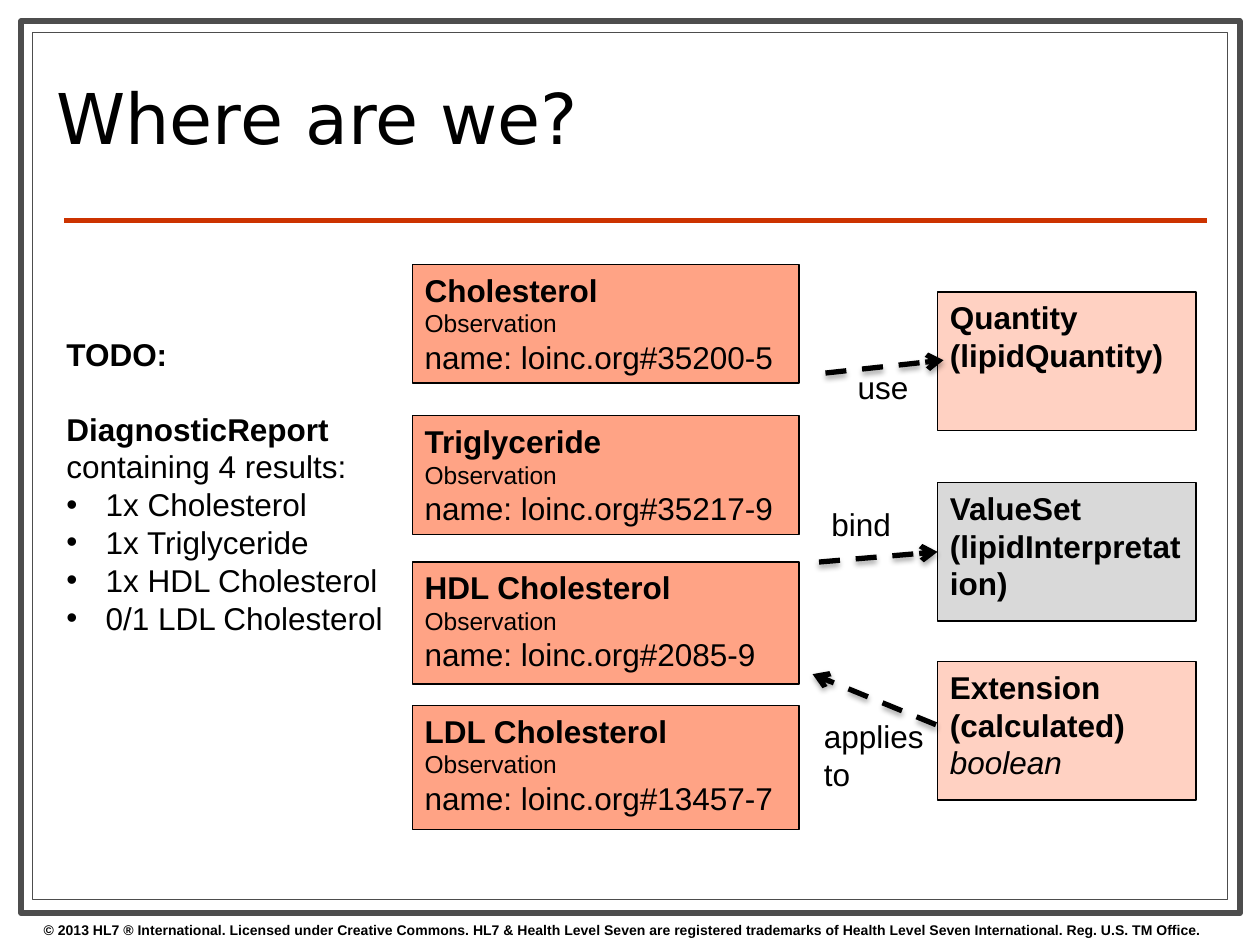
from lxml import etree
from pptx import Presentation
from pptx.dml.color import RGBColor as Rgb
from pptx.enum.dml import MSO_LINE as Dash
from pptx.enum.shapes import MSO_CONNECTOR as Conn, MSO_SHAPE as Kind
from pptx.enum.text import MSO_ANCHOR as Anchor, PP_ALIGN as Align
from pptx.oxml import parse_xml
from pptx.oxml.ns import nsdecls, qn
from pptx.util import Cm, Pt

HUE = {"ink": "000000", "paper": "FFFFFF", "frame": "4D4D4D", "rule": "CC3300",
       "salmon": "FFA385", "pink": "FFD1C2", "grey": "D9D9D9"}
SHADE = ('<a:effectLst %s><a:outerShdw blurRad="40000" dist="23000" dir="5400000" '
         'rotWithShape="0"><a:srgbClr val="000000"><a:alpha val="35000"/>'
         '</a:srgbClr></a:outerShdw></a:effectLst>' % nsdecls("a"))


def tint(name):
    """Look up a colour by name."""
    return Rgb.from_string(HUE[name])


def write(frame, paras, wrap=True, font="Arial"):
    """Fill a text frame from (text, size, style) paragraphs."""
    frame.word_wrap = wrap
    for i, (text, size, style) in enumerate(paras):
        para = frame.add_paragraph() if i else frame.paragraphs[0]
        para.alignment = Align.LEFT
        if "dot" in style:
            props = para._p.get_or_add_pPr()
            props.set("marL", str(Cm(0.79)))
            props.set("indent", str(Cm(-0.79)))
            etree.SubElement(props, qn("a:buFont")).set("typeface", "Arial")
            etree.SubElement(props, qn("a:buChar")).set("char", "•")
        if "gap" in style:
            para.space_before = Pt(21)
        run = para.add_run()
        run.text = text
        run.font.name, run.font.size = font, Pt(size)
        run.font.bold, run.font.italic = "bold" in style, "slant" in style
        run.font.color.rgb = tint("ink")


def panel(shapes, box, fill, line="ink", width=0.75, paras=()):
    """Draw a filled rectangle with text at its top left."""
    rect = shapes.add_shape(Kind.RECTANGLE, *map(Cm, box))
    rect.shadow.inherit = False
    rect.fill.solid()
    rect.fill.fore_color.rgb = tint(fill)
    rect.line.color.rgb = tint(line)
    rect.line.width = Pt(width)
    rect.text_frame.vertical_anchor = Anchor.TOP
    write(rect.text_frame, paras)
    return rect


def label(shapes, box, paras, wrap=True, font="Arial"):
    """Place a text box and return its frame."""
    frame = shapes.add_textbox(*map(Cm, box)).text_frame
    write(frame, paras, wrap, font)
    return frame


def stroke(shapes, start, end, color):
    """Draw a thick straight line."""
    line = shapes.add_connector(Conn.STRAIGHT, *map(Cm, (*start, *end)))
    line.line.color.rgb = tint(color)
    line.line.width = Pt(3)
    line._element.spPr.append(parse_xml("<a:effectLst %s/>" % nsdecls("a")))
    return line


def backdrop(shapes, box):
    """Draw the double frame, the rule and the footer."""
    x, y, w, h = box
    panel(shapes, box, "paper", "frame", 3.5)
    panel(shapes, (x + 0.22, y + 0.22, w - 0.46, h - 0.5), "paper", "frame")
    stroke(shapes, (x + 0.87, y + 4.01), (x + w - 0.66, y + 4.01), "rule")
    note = ("© 2013 HL7 ® International. Licensed under Creative Commons. "
            "HL7 & Health Level Seven are registered trademarks of "
            "Health Level Seven International. Reg. U.S. TM Office.")
    label(shapes, (x + 0.2, y + h + 0.05, 25.4, 0.6), [(note, 8, "bold")])


def heading(shapes, box):
    """Write the slide title."""
    frame = label(shapes, box, [("Where are we?", 40, "")], font="DejaVu Sans")
    frame.vertical_anchor = Anchor.MIDDLE
    frame.paragraphs[0].line_spacing = 0.8


def todo(shapes, box):
    """List the results that the report holds."""
    items = ("1x Cholesterol", "1x Triglyceride", "1x HDL Cholesterol",
             "0/1 LDL Cholesterol")
    label(shapes, box, [("TODO:", 18, "bold"), ("DiagnosticReport", 18, "bold gap"),
                        ("containing 4 results:", 18, "")]
          + [(item, 18, "dot") for item in items])


def tests(shapes, box):
    """Stack the four observation cards."""
    x, y, w = box
    rows = [("Cholesterol", "35200-5", 0, 2.39), ("Triglyceride", "35217-9", 3.05, 2.39),
            ("HDL Cholesterol", "2085-9", 6, 2.46), ("LDL Cholesterol", "13457-7", 8.89, 2.51)]
    for name, code, drop, high in rows:
        panel(shapes, (x, y + drop, w, high), "salmon", paras=[
            (name, 18, "bold"), ("Observation", 14, ""),
            ("name: loinc.org#" + code, 18, "")])


def parts(shapes, box):
    """Stack the three definition cards and return them."""
    x, y, w, h = box
    rows = [(0, "pink", [("Quantity (lipidQuantity)", 18, "bold")]),
            (3.84, "grey", [("ValueSet", 18, "bold"),
                            ("(lipidInterpretation)", 18, "bold")]),
            (7.45, "pink", [("Extension", 18, "bold"), ("(calculated)", 18, "bold"),
                            ("boolean", 18, "slant")])]
    return [panel(shapes, (x, y + drop, w, h), fill, paras=paras)
            for drop, fill, paras in rows]


def link(shapes, box, start, end, spot, words):
    """Draw a dashed arrow and its label inside a box."""
    x, y = box
    line = stroke(shapes, (x + start[0], y + start[1]), (x + end[0], y + end[1]), "ink")
    line.line.dash_style = Dash.DASH
    etree.SubElement(line.line._get_or_add_ln(), qn("a:tailEnd")).set("type", "arrow")
    props = line._element.spPr
    props.replace(props.find(qn("a:effectLst")), parse_xml(SHADE))
    left, top, w, h = spot
    label(shapes, (x + left, y + top, w, h), [(word, 18, "") for word in words], False)
    return line


def main():
    """Build and save the slide."""
    deck = Presentation()
    deck.slide_width, deck.slide_height = Cm(25.4), Cm(19.05)
    shapes = deck.slides.add_slide(deck.slide_layouts[6]).shapes
    backdrop(shapes, (0.43, 0.43, 24.56, 17.98))
    heading(shapes, (0.89, 0.91, 18.21, 3.2))
    tests(shapes, (8.31, 5.33, 7.8))
    cards = parts(shapes, (18.9, 5.89, 5.21, 2.79))
    link(shapes, (16.64, 7.26), (0, 0.26), (2.38, 0), (0.4, 0.03, 1.55, 1.02), ["use"])
    bind = link(shapes, (16.51, 10.06), (0, 1.27), (2.39, 1.05),
                (0, 0, 1.73, 1.02), ["bind"])
    bind.end_connect(cards[1], 1)
    link(shapes, (16.36, 13.59), (2.51, 1.02), (0.02, 0),
         (0, 0.74, 2.54, 1.8), ["applies", "to"])
    todo(shapes, (1.09, 6.63, 7.01, 6.4))
    deck.save("out.pptx")


if __name__ == "__main__":
    main()
